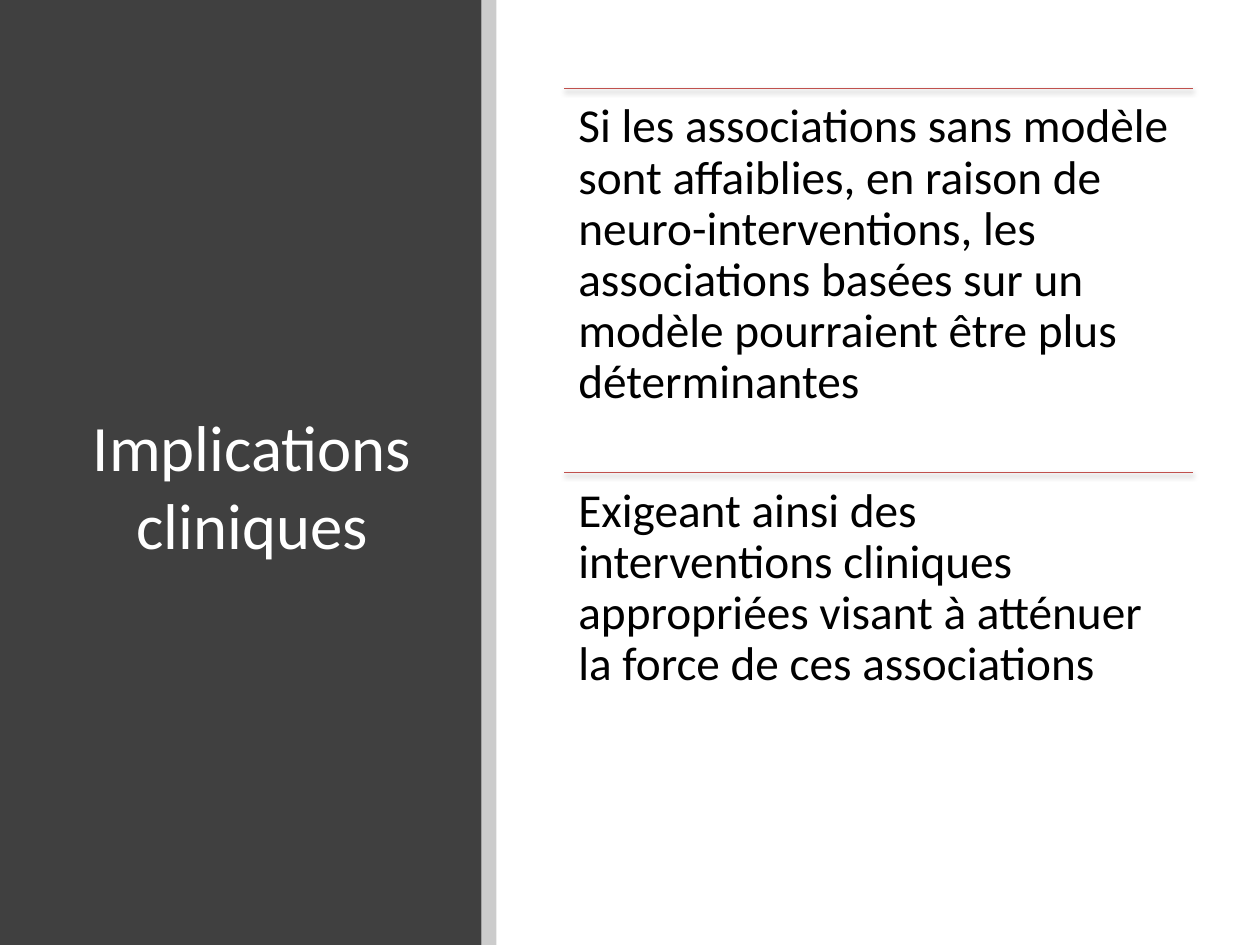
import lxml.etree
import pptx
import pptx.dml.color
import pptx.enum.shapes
import pptx.enum.text
import pptx.oxml
import pptx.oxml.ns
import pptx.util

WIDE, HIGH = 10, 7.5
INCH = pptx.util.Inches
ALIGN = pptx.enum.text.PP_ALIGN
ANCHOR = pptx.enum.text.MSO_ANCHOR
FIT = pptx.enum.text.MSO_AUTO_SIZE
TITLE = "Implications cliniques"
POINTS = [
    "Si les associations sans modèle sont affaiblies, en raison de "
    "neuro-interventions, les associations basées sur un modèle "
    "pourraient être plus déterminantes",
    "Exigeant ainsi des interventions cliniques appropriées visant à "
    "atténuer la force de ces associations",
]
SHADOW = (
    '<a:effectLst %s><a:outerShdw blurRad="39370" dist="22860" dir="5400000" '
    'rotWithShape="0"><a:srgbClr val="000000"><a:alpha val="35000"/>'
    '</a:srgbClr></a:outerShdw></a:effectLst>' % pptx.oxml.ns.nsdecls("a"))


def paint(fmt, code):
    """Set a font or fill colour from a hex string."""
    if hasattr(fmt, "solid"):
        fmt.solid()
        fmt = fmt.fore_color
    else:
        fmt = fmt.color
    fmt.rgb = pptx.dml.color.RGBColor.from_string(code)


def style(item, **values):
    for name, value in values.items():
        setattr(item, name, value)


def write(frame, text, size, code, **look):
    """Put one styled paragraph in a text frame."""
    style(frame, word_wrap=True, auto_size=FIT.NONE)
    frame.text = text
    para = frame.paragraphs[0]
    style(para, **look)
    font = para.runs[0].font
    style(font, name="Calibri", size=pptx.util.Pt(size))
    paint(font, code)


def band(slide, box, code, alpha=None):
    """Draw a plain bar, see-through if alpha (percent) is given."""
    bar = slide.shapes.add_shape(
        pptx.enum.shapes.MSO_SHAPE.RECTANGLE, *map(INCH, box))
    bar.shadow.inherit = False
    paint(bar.fill, code)
    bar.line.fill.background()
    if alpha is not None:
        tint = bar.fill._xPr.find(".//" + pptx.oxml.ns.qn("a:srgbClr"))
        lxml.etree.SubElement(
            tint, pptx.oxml.ns.qn("a:alpha"), val=str(alpha * 1000))


def panel(slide, box):
    """Dark side panel with its pale edge and the title."""
    left, top, wide, high = box
    band(slide, box, "404040")
    head = slide.shapes.title
    slide.shapes._spTree.append(head._element)
    style(head, left=INCH(left + 0.63), top=INCH(top + 0.89),
          width=INCH(2.74), height=INCH(5.91))
    head.text_frame.vertical_anchor = ANCHOR.MIDDLE
    write(head.text_frame, TITLE, 37, "FFFFFF", alignment=ALIGN.CENTER)
    band(slide, (left + wide, top, 0.12, high), "000000", 20)


def rule(slide, left, top, wide):
    """Thin red line with a soft shadow below."""
    line = slide.shapes.add_connector(
        pptx.enum.shapes.MSO_CONNECTOR.STRAIGHT,
        *map(INCH, (left, top, left + wide, top)))
    line.line.width = pptx.util.Pt(0.75)
    paint(line.line.fill, "C0504D")
    line._element.spPr.append(pptx.oxml.parse_xml(SHADOW))


def points(slide, box):
    """Equal rows, each a rule with its text below."""
    left, top, wide, high = box
    row = high / len(POINTS)
    for i, text in enumerate(POINTS):
        y = top + i * row
        rule(slide, left, y, wide)
        note = slide.shapes.add_textbox(*map(INCH, (left, y, wide, row)))
        frame = note.text_frame
        style(frame, vertical_anchor=ANCHOR.TOP, **{
            "margin_" + side: INCH(0.11)
            for side in ("left", "top", "right", "bottom")})
        write(frame, text, 27, "000000",
              alignment=ALIGN.LEFT, line_spacing=0.9)


def main():
    deck = pptx.Presentation()
    style(deck, slide_width=INCH(WIDE), slide_height=INCH(HIGH))
    slide = deck.slides.add_slide(deck.slide_layouts[5])
    paint(slide.background.fill, "FFFFFF")
    panel(slide, (0, 0, 3.82, HIGH))
    points(slide, (4.48, 0.7, 4.99, 6.1))
    deck.save("out.pptx")


if __name__ == "__main__":
    main()
